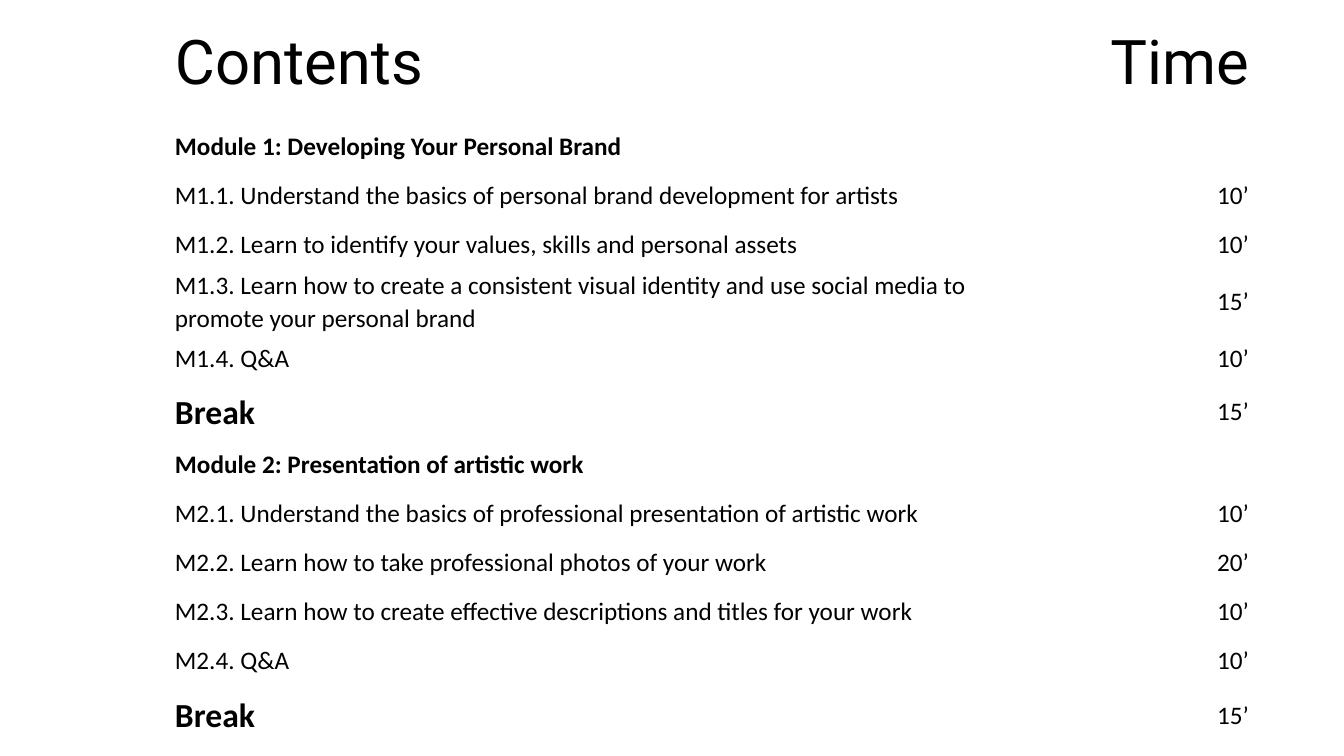
from dataclasses import dataclass

from pptx import Presentation
from pptx.dml.color import RGBColor
from pptx.enum.text import MSO_ANCHOR as Anchor, PP_ALIGN as Align
from pptx.util import Emu, Pt

SCALE = 914400 / 100.8  # EMU in one px
WIDTH, HEIGHT = 1344, 756
LEFT, TOP = 168, 0
COLS = (842, 246)
INSET = 7
BLACK = RGBColor(0, 0, 0)


@dataclass(frozen=True)
class Style:
    size: int
    bold: bool = False
    font: str = "Calibri"


HEAD = Style(44, font="Roboto")
BODY = Style(18)
MODULE = Style(18, bold=True)
BREAK = Style(24, bold=True)


@dataclass(frozen=True)
class Row:
    topic: str
    time: str = ""
    style: Style = BODY
    time_style: Style = BODY
    height: int = 49


ROWS = (
    Row("Contents", "Time", HEAD, HEAD, 121),
    Row("Module 1: Developing Your Personal Brand", style=MODULE),
    Row("M1.1. Understand the basics of personal brand development for artists", "10’"),
    Row("M1.2. Learn to identify your values, skills and personal assets", "10’"),
    Row("M1.3. Learn how to create a consistent visual identity and use social "
        "media to promote your personal brand", "15’", height=47),
    Row("M1.4. Q&A", "10’"),
    Row("Break", "15’", BREAK, height=57),
    Row("Module 2: Presentation of artistic work", style=MODULE),
    Row("M2.1. Understand the basics of professional presentation of artistic work", "10’"),
    Row("M2.2. Learn how to take professional photos of your work", "20’"),
    Row("M2.3. Learn how to create effective descriptions and titles for your work", "10’"),
    Row("M2.4. Q&A", "10’"),
    Row("Break", "15’", BREAK, height=61),
)


def px(count: int) -> Emu:
    return Emu(round(count * SCALE))


def fill_cell(cell, text: str, style: Style, align: Align) -> None:
    cell.fill.background()
    cell.vertical_anchor = Anchor.MIDDLE
    cell.margin_left = cell.margin_right = px(INSET)
    cell.margin_top = cell.margin_bottom = 0
    if not text:
        return
    para = cell.text_frame.paragraphs[0]
    para.alignment = align
    para.line_spacing = 1.07
    para.space_after = Pt(8)
    run = para.add_run()
    run.text = text
    font = run.font
    font.name, font.size, font.bold = style.font, Pt(style.size), style.bold
    font.color.rgb = BLACK


def add_agenda(slide) -> None:
    total = sum(row.height for row in ROWS)
    frame = slide.shapes.add_table(
        len(ROWS), len(COLS), px(LEFT), px(TOP), px(sum(COLS)), px(total))
    table = frame.table
    table.first_row = table.horz_banding = False
    for column, width in zip(table.columns, COLS):
        column.width = px(width)
    for index, row in enumerate(ROWS):
        table.rows[index].height = px(row.height)
        fill_cell(table.cell(index, 0), row.topic, row.style, Align.LEFT)
        fill_cell(table.cell(index, 1), row.time, row.time_style, Align.RIGHT)


def main() -> None:
    deck = Presentation()
    deck.slide_width, deck.slide_height = px(WIDTH), px(HEIGHT)
    add_agenda(deck.slides.add_slide(deck.slide_layouts[6]))
    deck.save("out.pptx")


if __name__ == "__main__":
    main()
